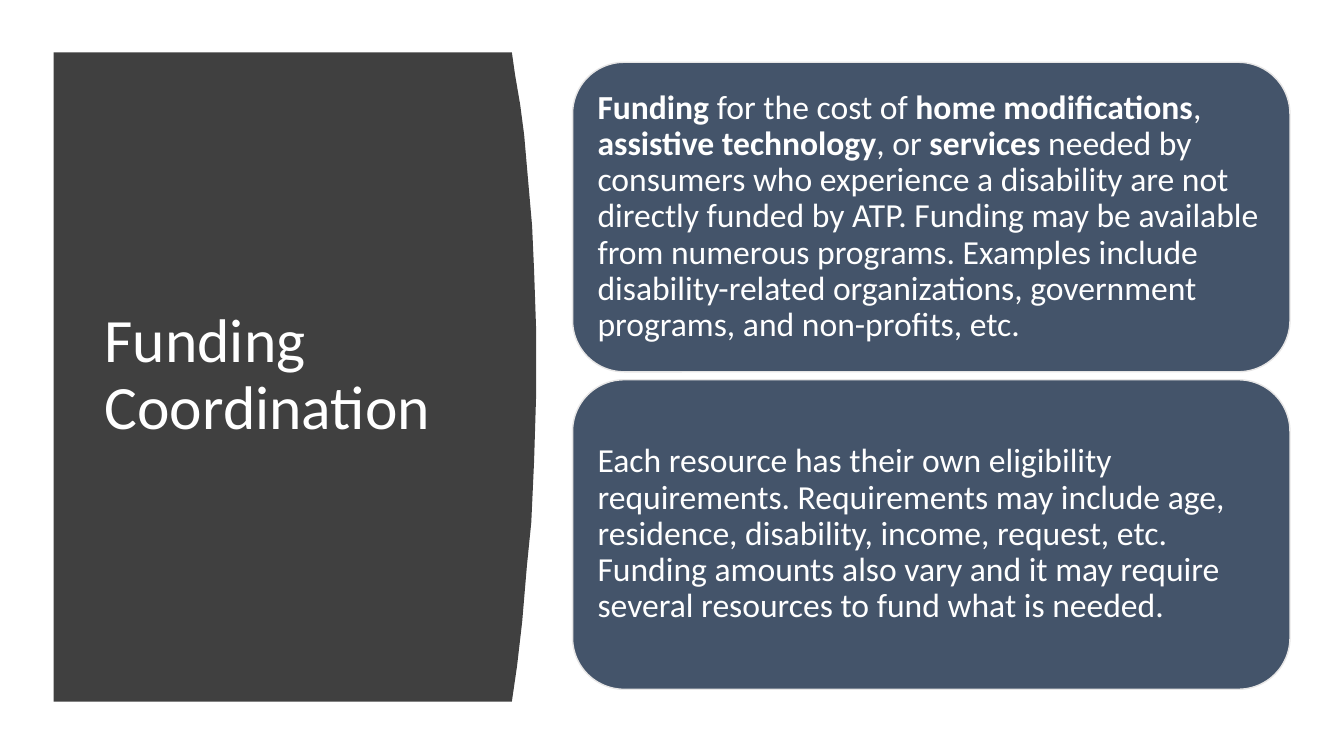
from pptx import Presentation
from pptx import util as u
from pptx.dml import color
from pptx.enum import shapes, text

CHARCOAL = color.RGBColor(0x40, 0x40, 0x40)
SLATE = color.RGBColor(0x44, 0x54, 0x6A)
PALE = color.RGBColor(0xE7, 0xE6, 0xE6)
WHITE = color.RGBColor(0xFF, 0xFF, 0xFF)

PANEL_OUTLINE = [
    (1.35, 1.32), (12.9, 1.32), (12.98, 1.88), (13.11, 2.64), (13.21, 3.4),
    (13.31, 4.55), (13.41, 5.69), (13.46, 6.81), (13.51, 8.26), (13.51, 10.01),
    (13.46, 11.63), (13.39, 13.16), (13.28, 14.25), (13.16, 15.67),
    (13.03, 16.79), (12.9, 17.68), (1.35, 17.68),
]
CARDS = [
    [
        ("Funding", True),
        (" for the cost of ", False),
        ("home modifications", True),
        (", ", False),
        ("assistive technology", True),
        (", or ", False),
        ("services", True),
        (" needed by consumers who experience a disability are not directly "
         "funded by ATP. Funding may be available from numerous programs. "
         "Examples include disability-related organizations, government "
         "programs, and non-profits, etc.", False),
    ],
    [
        ("Each resource has their own eligibility requirements. Requirements "
         "may include age, residence, disability, income, request, etc. "
         "Funding amounts also vary and it may require several resources to "
         "fund what is needed.", False),
    ],
]


def write_text(shape, runs, size):
    frame = shape.text_frame
    frame.word_wrap = True
    frame.vertical_anchor = text.MSO_ANCHOR.MIDDLE
    paragraph = frame.paragraphs[0]
    paragraph.alignment = text.PP_ALIGN.LEFT
    paragraph.line_spacing = 0.9
    for words, bold in runs:
        run = paragraph.add_run()
        run.text = words
        run.font.name = "Calibri"
        run.font.size = u.Pt(size)
        run.font.bold = bold
        run.font.color.rgb = WHITE


presentation = Presentation()
presentation.slide_width = u.Cm(33.87)
presentation.slide_height = u.Cm(19.05)
slide = presentation.slides.add_slide(presentation.slide_layouts[6])

outline = [(u.Cm(x), u.Cm(y)) for x, y in PANEL_OUTLINE]
builder = slide.shapes.build_freeform(*outline[0])
builder.add_line_segments(outline[1:], close=True)
panel = builder.convert_to_shape()
panel.shadow.inherit = False
panel.fill.solid()
panel.fill.fore_color.rgb = CHARCOAL
panel.line.fill.background()

title = slide.shapes.add_textbox(u.Cm(2.39), u.Cm(2.82), u.Cm(9.5), u.Cm(13.31))
write_text(title, [("Funding Coordination", False)], 44)

for index, runs in enumerate(CARDS):
    card = slide.shapes.add_shape(
        shapes.MSO_SHAPE.ROUNDED_RECTANGLE,
        u.Cm(14.43), u.Cm(1.57 + 8 * index), u.Cm(18.08), u.Cm(7.8))
    card.shadow.inherit = False
    card.fill.solid()
    card.fill.fore_color.rgb = SLATE
    card.line.color.rgb = PALE
    card.line.width = u.Pt(1)
    frame = card.text_frame
    frame.margin_left = frame.margin_right = u.Cm(0.25)
    frame.margin_top = frame.margin_bottom = u.Cm(0.25)
    write_text(card, runs, 24)

presentation.save("out.pptx")
